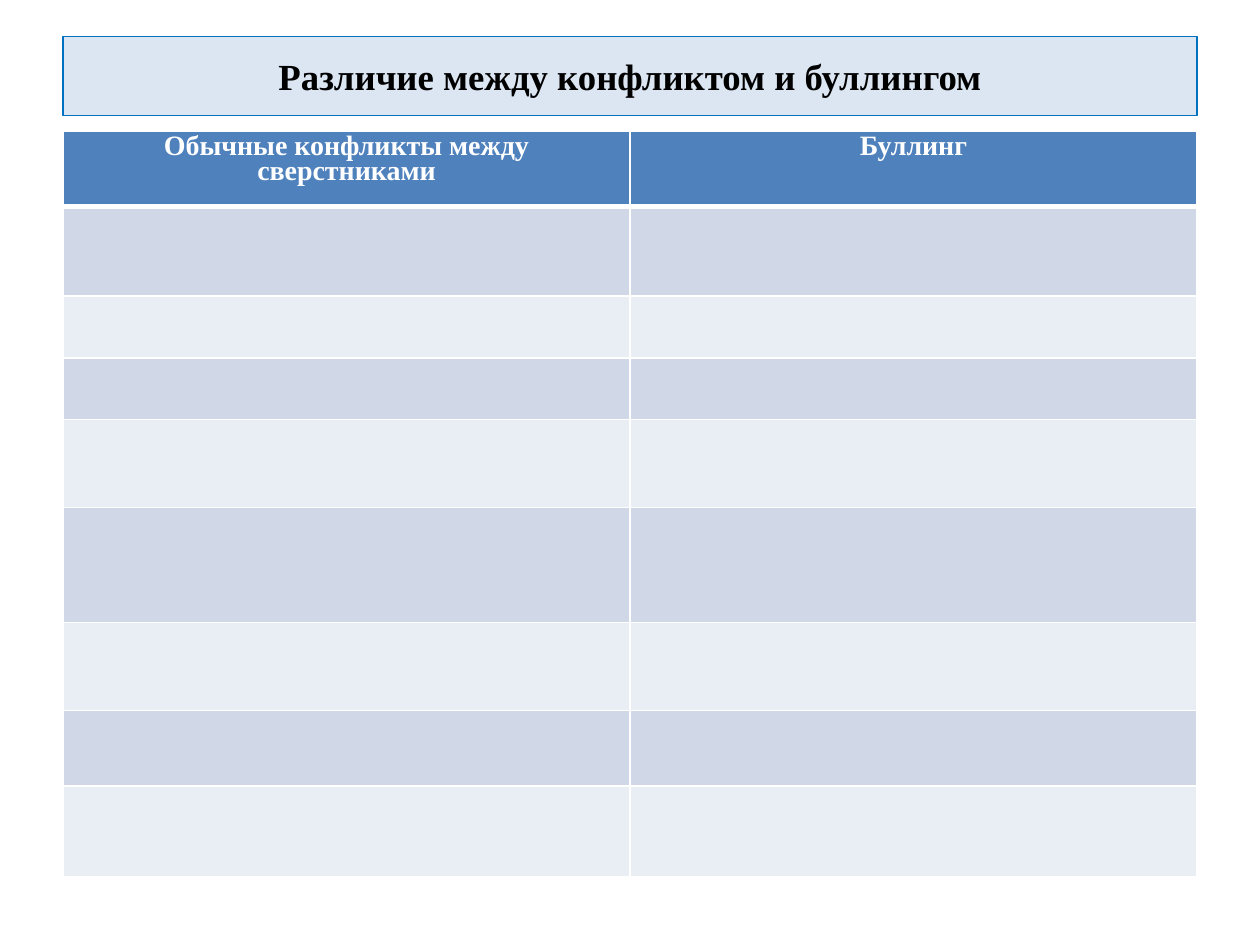
"""Build a slide with a blank comparison table of conflict and bullying."""
from dataclasses import dataclass

from lxml.etree import SubElement
from pptx import Presentation
from pptx.dml.color import RGBColor
from pptx.enum.shapes import MSO_SHAPE as Shape
from pptx.enum.text import MSO_ANCHOR as Anchor, PP_ALIGN as Align
from pptx.oxml.ns import qn
from pptx.util import Inches, Pt

LEFT, WIDTH = 0.5, 9
HEADERS = ("Обычные конфликты между сверстниками", "Буллинг")
BANDS = ("D0D8E8", "E9EDF4")
ROW_HEIGHTS = (0.6, 0.71, 0.49, 0.49, 0.7, 0.91, 0.7, 0.6, 0.72)
THIN, THICK = 1, 3
MARGINS = {"margin_left": 0.07, "margin_top": 0.04,
           "margin_right": 0.07, "margin_bottom": 0.04}


@dataclass
class TextStyle:
    size: int
    color: str
    spacing: float = 1.0


TITLE = TextStyle(21, "000000")
HEADER = TextStyle(16, "FFFFFF", 0.8)


def rgb(value: str) -> RGBColor:
    return RGBColor.from_string(value)


def fill_with(target, color: str) -> None:
    target.fill.solid()
    target.fill.fore_color.rgb = rgb(color)


def write(tf, text: str, style: TextStyle) -> None:
    p = tf.paragraphs[0]
    p.alignment, p.line_spacing = Align.CENTER, style.spacing
    r = p.add_run()
    r.text = text
    formats = {"name": "Times New Roman", "size": Pt(style.size), "bold": True}
    for name, value in formats.items():
        setattr(r.font, name, value)
    r.font.color.rgb = rgb(style.color)


def add_borders(cell, widths: dict[str, float]) -> None:
    props = cell._tc.get_or_add_tcPr()
    for side, width in widths.items():
        ln = SubElement(props, qn(f"a:ln{side}"), w=str(Pt(width)))
        SubElement(SubElement(ln, qn("a:solidFill")), qn("a:srgbClr"), val="FFFFFF")


def add_title(slide, text: str) -> None:
    sp = slide.shapes.add_shape(Shape.RECTANGLE, Inches(LEFT), Inches(0.29),
                                Inches(WIDTH), Inches(0.63))
    sp.shadow.inherit = False
    fill_with(sp, "DCE6F2")
    sp.line.color.rgb, sp.line.width = rgb("0070C0"), Pt(0.75)
    tf = sp.text_frame
    tf.word_wrap, tf.vertical_anchor = True, Anchor.MIDDLE
    write(tf, text, TITLE)


def add_comparison(slide) -> None:
    table = slide.shapes.add_table(
        len(ROW_HEIGHTS), len(HEADERS), Inches(LEFT), Inches(1.04),
        Inches(WIDTH), Inches(sum(ROW_HEIGHTS))).table
    for i, (row, height) in enumerate(zip(table.rows, ROW_HEIGHTS)):
        row.height = Inches(height)
        top = THICK if i == 1 else THIN
        bottom = THICK if i == 0 else THIN
        for cell, header in zip(row.cells, HEADERS):
            add_borders(cell, {"L": THIN, "R": THIN, "T": top, "B": bottom})
            fill_with(cell, BANDS[(i - 1) % 2] if i else "4F81BD")
            for name, value in MARGINS.items():
                setattr(cell, name, Inches(value))
            if i == 0:
                write(cell.text_frame, header, HEADER)


def main() -> None:
    prs = Presentation()
    prs.slide_width, prs.slide_height = Inches(10), Inches(7.5)
    s = prs.slides.add_slide(prs.slide_layouts[6])
    add_title(s, "Различие между конфликтом и буллингом")
    add_comparison(s)
    prs.save("out.pptx")


if __name__ == "__main__":
    main()
